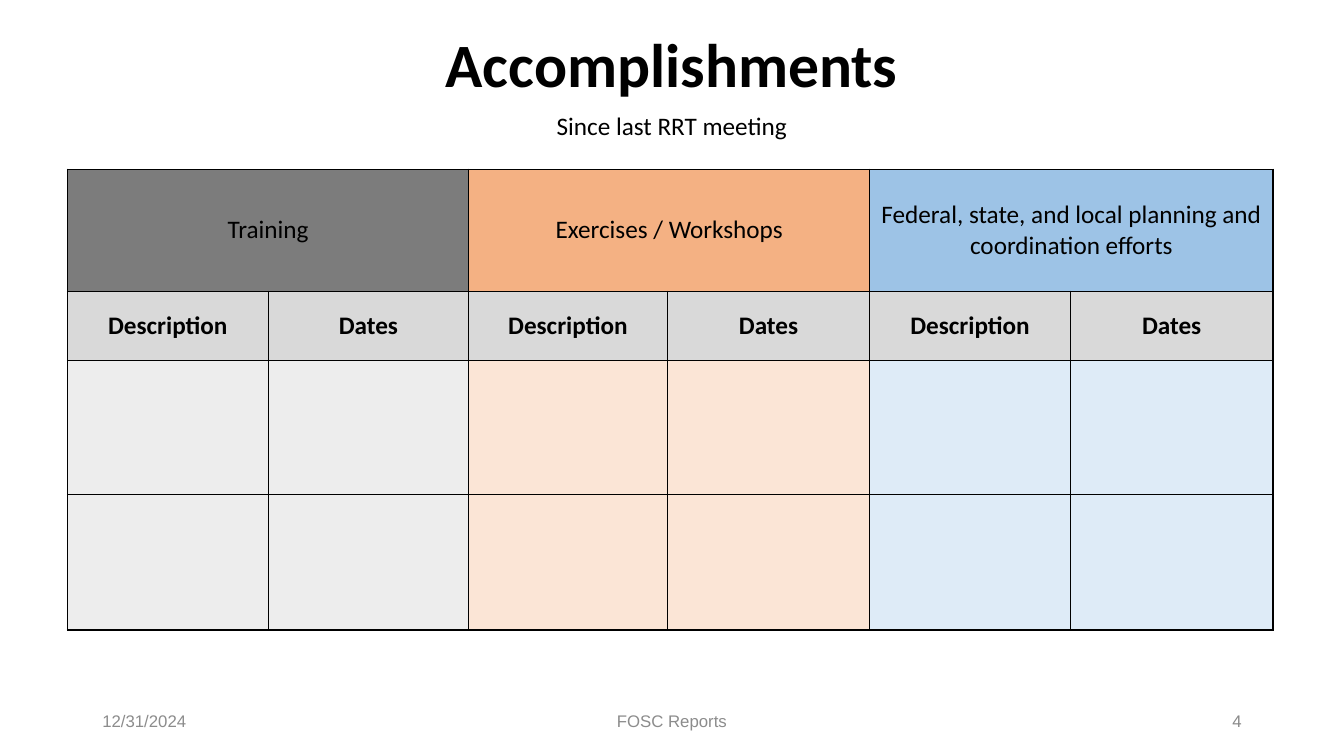
from lxml import etree
from pptx import Presentation
from pptx.dml.color import RGBColor
from pptx.enum.shapes import MSO_SHAPE
from pptx.enum.text import MSO_ANCHOR, PP_ALIGN
from pptx.oxml.ns import qn
from pptx.util import Pt

LEFT, CENTER, RIGHT = PP_ALIGN.LEFT, PP_ALIGN.CENTER, PP_ALIGN.RIGHT
TOP, MIDDLE = MSO_ANCHOR.TOP, MSO_ANCHOR.MIDDLE
RECTANGLE = MSO_SHAPE.RECTANGLE

BLACK = RGBColor(0x00, 0x00, 0x00)
WHITE = RGBColor(0xFF, 0xFF, 0xFF)
FOOTER_GRAY = RGBColor(0x8C, 0x8C, 0x8C)
NUMBER_GRAY = RGBColor(0x89, 0x89, 0x89)
LABEL_GRAY = RGBColor(0xD9, 0xD9, 0xD9)
DARK_GRAY = RGBColor(0x7C, 0x7C, 0x7C)
PALE_GRAY = RGBColor(0xED, 0xED, 0xED)
ORANGE = RGBColor(0xF4, 0xB1, 0x83)
PALE_ORANGE = RGBColor(0xFB, 0xE5, 0xD6)
BLUE = RGBColor(0x9D, 0xC3, 0xE6)
PALE_BLUE = RGBColor(0xDE, 0xEB, 0xF7)

# Topic, header fill, body fill
TOPICS = [
    ("Training", DARK_GRAY, PALE_GRAY),
    ("Exercises / Workshops", ORANGE, PALE_ORANGE),
    ("Federal, state, and local planning and coordination efforts", BLUE, PALE_BLUE),
]
LABELS = ["Description", "Dates"]
COLUMN_WIDTHS = [143.28, 143.28, 141.84, 144.72, 143.28, 144.72]
ROW_HEIGHTS = [87.12, 49.68, 95.76, 96.48]


class SlideBuilder:
    """Holds the text style and the current slide."""

    font_name = "Calibri"
    footer_font = "Arial"
    body_size = 18

    def __init__(self, page):
        self.page = page

    def add_text(self, frame, text, align=CENTER, size=body_size, color=BLACK,
                 bold=False, font=font_name):
        para = frame.paragraphs[0]
        para.alignment = align
        span = para.add_run()
        span.text = text
        span.font.name = font
        span.font.size = Pt(size)
        span.font.bold = bold
        span.font.color.rgb = color

    def text_box(self, left, top, width, height, text, **style):
        box = self.page.shapes.add_textbox(Pt(left), Pt(top), Pt(width), Pt(height))
        box.text_frame.word_wrap = True
        box.text_frame.vertical_anchor = MIDDLE
        self.add_text(box.text_frame, text, **style)

    def footer(self, left, width, text, align, color=FOOTER_GRAY):
        self.text_box(left, 500.4, width, 28.8, text, align=align, size=12,
                      color=color, font=self.footer_font)

    def label_box(self, left, top, width, height, text):
        box = self.page.shapes.add_shape(RECTANGLE, Pt(left), Pt(top), Pt(width), Pt(height))
        box.shadow.inherit = False
        box.fill.solid()
        box.fill.fore_color.rgb = WHITE
        box.line.color.rgb = WHITE
        box.line.width = Pt(1)
        box.text_frame.word_wrap = False
        box.text_frame.vertical_anchor = TOP
        self.add_text(box.text_frame, text)

    def table(self, left, top, widths, heights):
        frame = self.page.shapes.add_table(len(heights), len(widths), Pt(left), Pt(top),
                                           Pt(sum(widths)), Pt(sum(heights)))
        grid = frame.table
        grid.first_row = grid.horz_banding = False
        for column, width in zip(grid.columns, widths):
            column.width = Pt(width)
        for row, height in zip(grid.rows, heights):
            row.height = Pt(height)
        return grid

    def cell(self, cell, fill, text="", bold=False):
        # Borders come before the fill in the cell properties
        properties = cell._tc.get_or_add_tcPr()
        for side in ("a:lnL", "a:lnR", "a:lnT", "a:lnB"):
            border = etree.SubElement(properties, qn(side), w=str(Pt(1)))
            solid = etree.SubElement(border, qn("a:solidFill"))
            etree.SubElement(solid, qn("a:srgbClr"), val=str(BLACK))
        cell.fill.solid()
        cell.fill.fore_color.rgb = fill
        cell.vertical_anchor = MIDDLE
        if text:
            self.add_text(cell.text_frame, text, bold=bold)


def main():
    deck = Presentation()
    deck.slide_width, deck.slide_height = Pt(960), Pt(540)
    builder = SlideBuilder(deck.slides.add_slide(deck.slide_layouts[6]))

    # Subtitle and footer
    builder.label_box(389.52, 75.6, 180.72, 28.8, "Since last RRT meeting")
    builder.footer(66, 216, "12/31/2024", LEFT)
    builder.footer(318, 324, "FOSC Reports", CENTER)
    builder.footer(678, 216, "4", RIGHT, NUMBER_GRAY)

    # Accomplishments table: two columns per topic
    grid = builder.table(48.24, 120.96, COLUMN_WIDTHS, ROW_HEIGHTS)
    for index, (topic, header_fill, body_fill) in enumerate(TOPICS):
        first = index * len(LABELS)
        for offset, label in enumerate(LABELS):
            column = first + offset
            builder.cell(grid.cell(0, column), header_fill, "" if offset else topic)
            builder.cell(grid.cell(1, column), LABEL_GRAY, label, bold=True)
            for row in range(2, len(ROW_HEIGHTS)):
                builder.cell(grid.cell(row, column), body_fill)
        grid.cell(0, first).merge(grid.cell(0, first + len(LABELS) - 1))

    # Title
    builder.text_box(0, 0, 960, 90, "Accomplishments", size=44, bold=True)

    deck.save("out.pptx")


if __name__ == "__main__":
    main()
